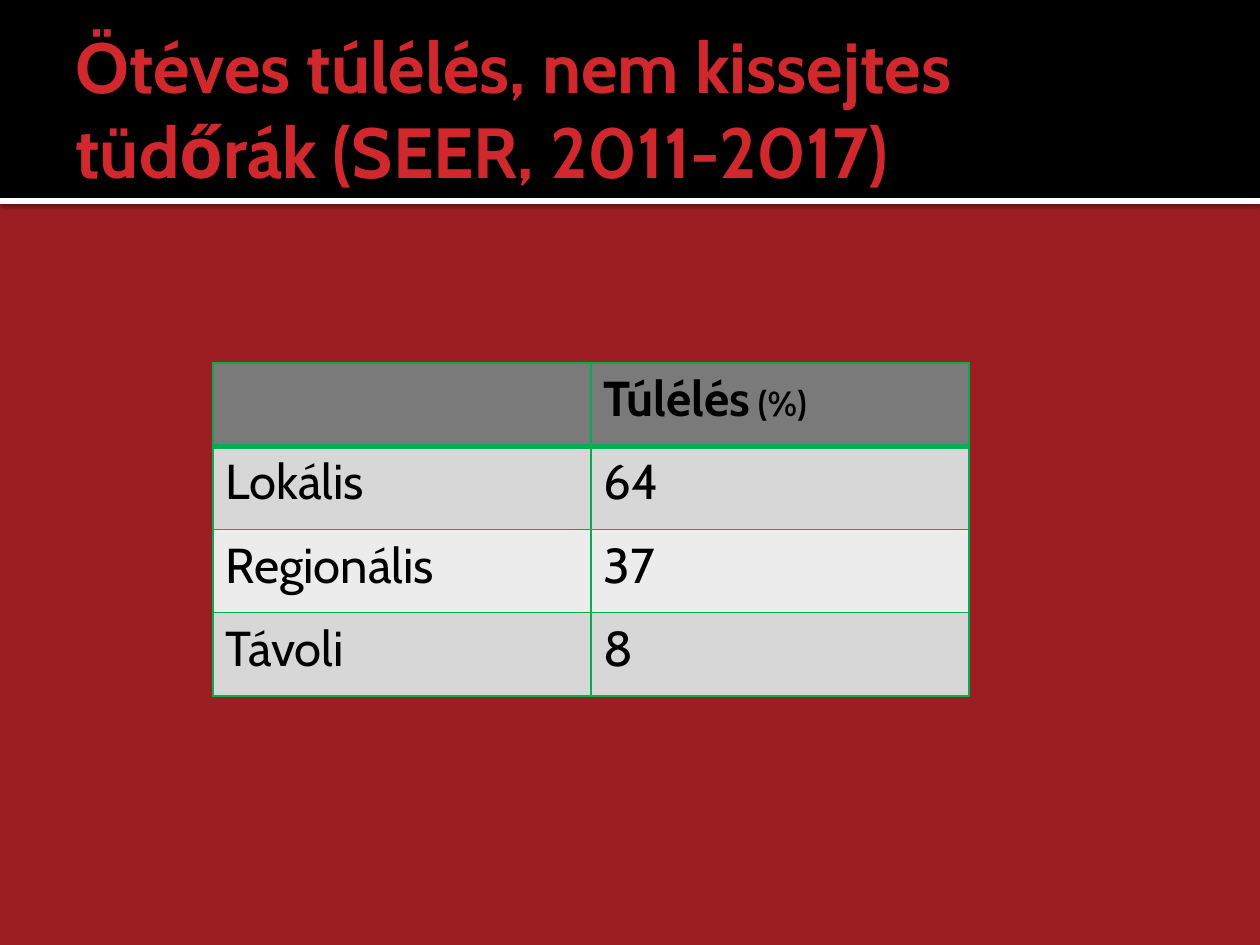
from dataclasses import dataclass
from typing import NamedTuple

from lxml.etree import SubElement as add_element
from pptx import Presentation
from pptx.dml.color import RGBColor
from pptx.enum.shapes import MSO_SHAPE as ShapeKind
from pptx.enum.text import MSO_ANCHOR as Anchor, MSO_AUTO_SIZE as AutoSize, PP_ALIGN as Align
from pptx.oxml.ns import qn
from pptx.util import Emu, Pt

EMU_PER_PX = 914400 / 126


@dataclass(frozen=True)
class Theme:
    font: str = "Cabin"
    background: str = "9D1E22"
    banner: str = "000000"
    rule: str = "FFFFFF"
    title: str = "D1282E"
    text: str = "000000"
    border: str = "00B050"
    header_fill: str = "7A7A7A"
    row_fills: tuple[str, str] = ("D7D7D7", "ECECEC")
    title_size: float = 40.5
    cell_size: float = 28
    unit_size: float = 20


class Box(NamedTuple):
    left: int
    top: int
    width: int
    height: int

    def emu(self) -> list[Emu]:
        return [px(value) for value in self]


class Band(NamedTuple):
    box: Box
    color: str
    shadow: bool


class SurvivalRow(NamedTuple):
    stage: str
    percent: str


THEME = Theme()
TITLE = "Ötéves túlélés, nem kissejtes tüdőrák (SEER, 2011-2017)"
TITLE_BOX = Box(63, 21, 1134, 173)
TABLE_BOX = Box(213, 363, 756, 333)
BANDS = [
    Band(Box(0, 198, 1260, 6), THEME.rule, True),
    Band(Box(0, 0, 1260, 198), THEME.banner, False),
]
ROWS = [SurvivalRow("Lokális", "64"), SurvivalRow("Regionális", "37"), SurvivalRow("Távoli", "8")]


def px(value: float) -> Emu:
    return Emu(round(value * EMU_PER_PX))


def add_text(paragraph, text: str, *, size: float, color: str = THEME.text, bold: bool = False) -> None:
    run = paragraph.add_run()
    run.text = text
    run.font.name = THEME.font
    run.font.size = Pt(size)
    run.font.bold = bold
    run.font.color.rgb = RGBColor.from_string(color)


def add_shadow(shape) -> None:
    effects = shape._element.spPr.find(qn("a:effectLst"))
    shadow = add_element(effects, qn("a:outerShdw"), blurRad=str(Pt(2.5)), dist=str(Pt(0.8)),
                         dir="5400000", algn="tl", rotWithShape="0")
    color = add_element(shadow, qn("a:srgbClr"), val="000000")
    add_element(color, qn("a:alpha"), val="60000")


def add_band(slide, band: Band, depth: int) -> None:
    shape = slide.shapes.add_shape(ShapeKind.RECTANGLE, *band.box.emu())
    shape.shadow.inherit = False
    shape.fill.solid()
    shape.fill.fore_color.rgb = RGBColor.from_string(band.color)
    shape.line.fill.background()
    if band.shadow:
        add_shadow(shape)
    slide.shapes._spTree.insert(2 + depth, shape._element)


def format_title(slide) -> None:
    title = slide.shapes.title
    title.left, title.top, title.width, title.height = TITLE_BOX.emu()
    frame = title.text_frame
    frame.word_wrap = True
    frame.auto_size = AutoSize.NONE
    frame.vertical_anchor = Anchor.MIDDLE
    frame.margin_left = Pt(7.2)
    frame.margin_right = frame.margin_top = frame.margin_bottom = Pt(3.6)
    paragraph = frame.paragraphs[0]
    paragraph.alignment = Align.LEFT
    add_text(paragraph, TITLE, size=THEME.title_size, color=THEME.title, bold=True)


def style_cell(cell, fill: str, top: float = 1, bottom: float = 1) -> None:
    properties = cell._tc.get_or_add_tcPr()
    for side, width in (("L", 1), ("R", 1), ("T", top), ("B", bottom)):
        line = add_element(properties, qn(f"a:ln{side}"), w=str(Pt(width)))
        solid = add_element(line, qn("a:solidFill"))
        add_element(solid, qn("a:srgbClr"), val=THEME.border)
    cell.fill.solid()
    cell.fill.fore_color.rgb = RGBColor.from_string(fill)


def add_survival_table(slide, rows: list[SurvivalRow]) -> None:
    table = slide.shapes.add_table(len(rows) + 1, 2, *TABLE_BOX.emu()).table
    for cell in table.rows[0].cells:
        style_cell(cell, THEME.header_fill, bottom=3)
    heading = table.cell(0, 1).text_frame.paragraphs[0]
    add_text(heading, "Túlélés", size=THEME.cell_size, bold=True)
    add_text(heading, " (%)", size=THEME.unit_size, bold=True)
    for index, row in enumerate(rows):
        for column, text in enumerate(row):
            cell = table.cell(index + 1, column)
            style_cell(cell, THEME.row_fills[index % 2], top=3 if index == 0 else 1)
            add_text(cell.text_frame.paragraphs[0], text, size=THEME.cell_size)


def main() -> None:
    presentation = Presentation()
    presentation.slide_width, presentation.slide_height = px(1260), px(945)
    slide = presentation.slides.add_slide(presentation.slide_layouts[5])
    background = slide.background.fill
    background.solid()
    background.fore_color.rgb = RGBColor.from_string(THEME.background)
    for depth, band in enumerate(BANDS):
        add_band(slide, band, depth)
    format_title(slide)
    add_survival_table(slide, ROWS)
    presentation.save("out.pptx")


if __name__ == "__main__":
    main()
